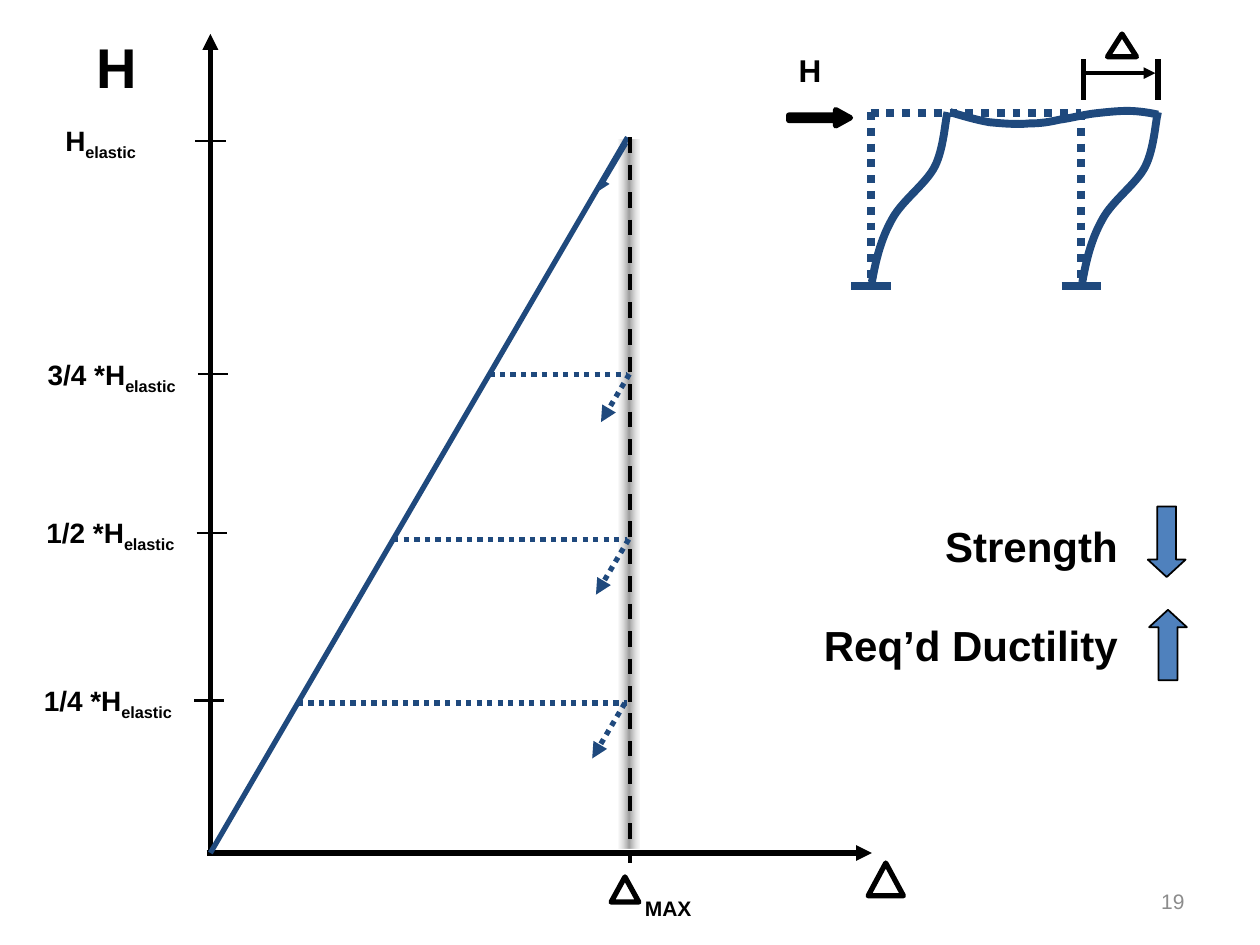
from dataclasses import dataclass
from typing import Any

from lxml import etree
from pptx import Presentation
from pptx import util as u
from pptx.dml import color
from pptx.enum import dml, shapes, text
from pptx.oxml import ns

COLUMNS, ROWS = 100, 75
CELL = u.Inches(10) // COLUMNS
BLACK, NAVY, BLUE, GREY = "000000", "1F497D", "4F81BD", "8C8C8C"
DOTS, DASHES = dml.MSO_LINE.ROUND_DOT, dml.MSO_LINE.DASH
PRESET = shapes.MSO_SHAPE


def rgb(value):
    return color.RGBColor.from_string(value)


def cells(count):
    return u.Emu(round(count * CELL))


def add_element(parent, tag, **attributes):
    return etree.SubElement(parent, ns.qn(tag), attributes)


def style_line(line, colour, width, dash=None):
    line.color.rgb = rgb(colour)
    line.width = u.Pt(width)
    if dash:
        line.dash_style = dash


@dataclass
class Region:
    shapes: Any
    left: float
    top: float
    width: float
    height: float

    def place(self, x, y):
        return cells(self.left + x), cells(self.top + y)

    def line(self, start, end, colour=BLACK, width=3, dash=None, arrow=False):
        connector = self.shapes.add_connector(
            shapes.MSO_CONNECTOR.STRAIGHT, *self.place(*start), *self.place(*end))
        style_line(connector.line, colour, width, dash)
        if arrow:
            add_element(connector.line._get_or_add_ln(), "a:tailEnd", type="triangle")
        add_element(connector._element.spPr, "a:effectLst")

    def shape(self, preset, x, y, width, height, fill=None, line=3, adjust=()):
        shape = self.shapes.add_shape(
            preset, *self.place(x, y), cells(width), cells(height))
        shape.shadow.inherit = False
        for index, value in enumerate(adjust):
            shape.adjustments[index] = value
        if fill:
            shape.fill.solid()
            shape.fill.fore_color.rgb = rgb(fill)
        else:
            shape.fill.background()
        if line:
            style_line(shape.line, BLACK, line)
        else:
            shape.line.fill.background()
        return shape

    def curve(self, points):
        first, *rest = [self.place(*point) for point in points]
        builder = self.shapes.build_freeform(*first)
        builder.add_line_segments(rest, close=False)
        shape = builder.convert_to_shape()
        shape.shadow.inherit = False
        shape.fill.background()
        style_line(shape.line, NAVY, 4.5)
        outline = shape._element.find(".//" + ns.qn("a:path"))
        segments = outline.findall(ns.qn("a:lnTo"))
        for start in range(0, len(segments), 3):
            bezier = add_element(outline, "a:cubicBezTo")
            for segment in segments[start:start + 3]:
                bezier.append(segment[0])
                outline.remove(segment)

    def text(self, x, y, width, height, paragraphs, size, colour=BLACK, bold=True,
             align=text.PP_ALIGN.LEFT, anchor=text.MSO_ANCHOR.TOP, gap=0):
        box = self.shapes.add_textbox(*self.place(x, y), cells(width), cells(height))
        frame = box.text_frame
        frame.word_wrap = True
        frame.vertical_anchor = anchor
        for index, (words, subscript) in enumerate(paragraphs):
            para = frame.add_paragraph() if index else frame.paragraphs[0]
            para.alignment = align
            if index:
                para.space_before = u.Pt(gap)
            for part in filter(None, (words, subscript)):
                span = para.add_run()
                span.text = part
                span.font.name = "Arial"
                span.font.size = u.Pt(size)
                span.font.bold = bold
                span.font.color.rgb = rgb(colour)
                if part == subscript:
                    span._r.get_or_add_rPr().set("baseline", "-25000")


def fade_sideways(shape):
    shape.fill.gradient()
    shape.fill.gradient_angle = 0
    stops = shape._element.spPr.find(".//" + ns.qn("a:gsLst"))
    for stop in list(stops):
        stops.remove(stop)
    for position, colour, alpha in ((0, "DDDDDD", 20), (50, "9E9E9E", 100), (100, "DDDDDD", 20)):
        stop = add_element(stops, "a:gs", pos=str(position * 1000))
        tint = add_element(stop, "a:srgbClr", val=colour)
        add_element(tint, "a:alpha", val=str(alpha * 1000))


def draw_graph(region):
    width, height = region.width, region.height
    fade_sideways(region.shape(PRESET.RECTANGLE, width - 0.7, 0.2, 1.7, 56.2, line=None))
    region.line((0, height + 0.1), (0, -8.2), arrow=True)
    region.line((-0.3, height), (52.5, height), arrow=True)
    region.text(-10, -8.8, 9.5, 6.3, [("H", None)], 32)
    region.shape(PRESET.ISOSCELES_TRIANGLE, 52.2, height + 0.8, 2.8, 2.6)

    region.line((0, height), (width, 0), NAVY)
    for level, tip, drop in ((18.8, 31, 3.8), (31.9, 30.6, 4.4), (44.9, 30.3, 4.4)):
        region.line((width * (1 - level / height), level), (width, level), NAVY, dash=DOTS)
        region.line((tip + drop * 0.59, level), (tip, level + drop), NAVY, dash=DOTS, arrow=True)
    region.line((width, 0.5), (width - 2.2, 4.2), NAVY, 1, arrow=True)
    region.line((width + 0.2, 0), (width + 0.2, height + 0.8), width=2.25, dash=DASHES)
    region.shape(PRESET.ISOSCELES_TRIANGLE, 31.8, height + 1.9, 2.2, 2)
    region.text(33.5, height + 2.9, 6.3, 3, [("MAX", None)], 12)

    ticks = (("H", 0.3, -1.2, -12.5), ("3/4 *H", 18.8, -1, -13.9),
             ("1/2 *H", 31.4, -1.1, -14), ("1/4 *H", 44.7, -1.3, -14.2))
    for label, level, start, left in ticks:
        region.line((start, level), (start + 2.4, level), width=1.5)
        region.text(left, level - 1.85, 13.6, 3.7, [(label, "elastic")], 16)


def draw_frame(region):
    bay, base = region.width, region.height
    for x in (0, bay):
        region.line((x, 0), (x, base), NAVY, 4.5, DOTS)
    region.line((0, 0.1), (bay, 0.1), NAVY, 4.5, DOTS)
    column = ((0.1, 13.5), (0.4, 11.8), (0.8, 10.1), (1.7, 8.5), (2.5, 7), (4.4, 5.7),
              (5.1, 4.3), (5.8, 2.9), (5.9, 0.8), (6.1, 0))
    for x in (0, bay):
        region.line((x - 1.55, base), (x + 1.6, base), NAVY, 4.5)
        region.curve([(x + across, down) for across, down in column])
    region.curve(((6.3, 0), (7.3, 0.3), (8.3, 0.6), (9.4, 0.8), (10.4, 0.9), (11.6, 1),
                  (12.6, 0.9), (13.5, 0.9), (14.1, 0.8), (15, 0.6), (15.8, 0.5),
                  (16.9, 0.2), (17.8, 0.1), (18.7, 0), (19.6, -0.1), (20.4, -0.1),
                  (21.3, -0.1), (22.4, 0.1), (22.8, 0.2)))
    for x in (bay + 0.2, bay + 6.1):
        region.line((x, -4.2), (x, -1))
    region.line((bay + 0.2, -3.1), (bay + 5.9, -3.1), width=2.25, arrow=True)
    region.shape(PRESET.ISOSCELES_TRIANGLE, bay + 2.1, -6.2, 2.3, 1.8)
    region.shape(PRESET.RIGHT_ARROW, -6.5, -0.2, 4.9, 1.3, BLACK, adjust=(0.333, 0.908))
    region.text(-6.7, -5.3, 5.2, 5, [("H", None)], 18)


def draw_tradeoff(region):
    region.text(0, 0, 28.1, region.height, [("Strength", None), ("Req’d Ductility", None)],
                24, align=text.PP_ALIGN.RIGHT, gap=28)
    for preset, x, y in ((PRESET.DOWN_ARROW, 29.5, -0.6), (PRESET.UP_ARROW, 29.6, 7.6)):
        region.shape(preset, x, y, 3, 5.6, BLUE, 1, (0.5, 0.46))


def draw_page_number(region):
    region.text(0, 0, region.width, region.height, [("19", None)], 12, GREY, False,
                text.PP_ALIGN.RIGHT, text.MSO_ANCHOR.MIDDLE)


def main():
    deck = Presentation()
    deck.slide_width, deck.slide_height = cells(COLUMNS), cells(ROWS)
    page = deck.slides.add_slide(deck.slide_layouts[6])
    draw_graph(Region(page.shapes, 16.7, 10.9, 33.1, 56.8))
    draw_frame(Region(page.shapes.add_group_shape().shapes, 69.1, 8.9, 16.7, 13.8))
    draw_tradeoff(Region(page.shapes, 61.6, 40.8, 32.6, 13.1))
    draw_page_number(Region(page.shapes, 71.7, 69.5, 23.3, 4))
    deck.save("out.pptx")


if __name__ == "__main__":
    main()
